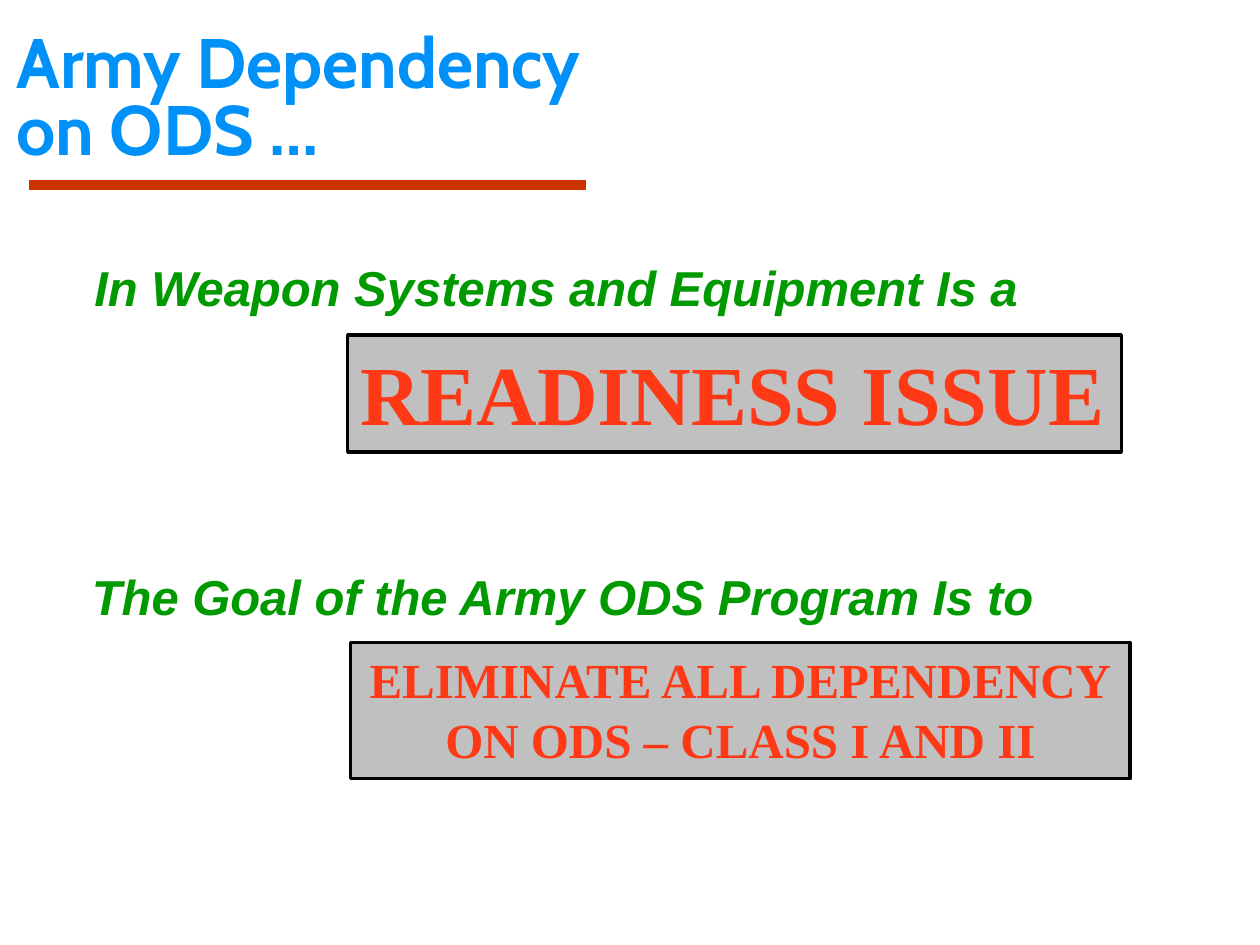
from pptx import Presentation
from pptx.dml.color import RGBColor
from pptx.enum.shapes import MSO_CONNECTOR, MSO_SHAPE
from pptx.enum.text import MSO_ANCHOR, PP_ALIGN
from pptx.oxml.ns import qn
from pptx.util import Inches, Pt
from lxml import etree


def color(hex_string):
    return RGBColor.from_string(hex_string)


def write_lines(frame, lines, font, size, hex_string, spacing, align=PP_ALIGN.LEFT, italic=False):
    for index, line in enumerate(lines):
        paragraph = frame.paragraphs[0] if index == 0 else frame.add_paragraph()
        paragraph.alignment = align
        paragraph.line_spacing = spacing
        paragraph.space_before = Pt(0)
        run = paragraph.add_run()
        run.text = line
        run.font.name = font
        run.font.size = Pt(size)
        run.font.bold = True
        run.font.italic = italic
        run.font.color.rgb = color(hex_string)


prs = Presentation()
prs.slide_width = Inches(10)
prs.slide_height = Inches(7.5)
slide = prs.slides.add_slide(prs.slide_layouts[5])

# Title
title = slide.shapes.title
title.left, title.top = Inches(0.03), Inches(0.08)
title.width, title.height = Inches(5.2), Inches(1.31)
title.text_frame.vertical_anchor = MSO_ANCHOR.BOTTOM
write_lines(title.text_frame, ["Army Dependency", "on ODS …"], "Cabin", 40, "0091F8", 0.8)

# Rule under the title
title_rule = slide.shapes.add_connector(
    MSO_CONNECTOR.STRAIGHT, Inches(0.23), Inches(1.47), Inches(4.65), Inches(1.47))
title_rule.line.color.rgb = color("CC3300")
title_rule.line.width = Pt(6)
etree.SubElement(title_rule._element.spPr, qn("a:effectLst"))

# Lead-in statements
statements = [
    ("In Weapon Systems and Equipment Is a", 0.65, 1.88, 7.6, 1.22, 1.25),
    ("The Goal of the Army ODS Program Is to", 0.63, 4.44, 8.48, 1.51, 1.02),
]
for wording, left, top, width, height, spacing in statements:
    statement = slide.shapes.add_textbox(Inches(left), Inches(top), Inches(width), Inches(height))
    statement.text_frame.word_wrap = True
    write_lines(statement.text_frame, [wording], "Arial", 28, "009900", spacing, italic=True)

# Boxed conclusions
conclusions = [
    (["READINESS ISSUE"], 2.76, 2.66, 6.14, 0.93, 48, 1.0, PP_ALIGN.LEFT),
    (["ELIMINATE ALL DEPENDENCY", "ON ODS – CLASS I AND II"],
     2.78, 5.1, 6.19, 1.08, 28, 1.02, PP_ALIGN.CENTER),
]
for lines, left, top, width, height, size, spacing, align in conclusions:
    conclusion = slide.shapes.add_shape(
        MSO_SHAPE.RECTANGLE, Inches(left), Inches(top), Inches(width), Inches(height))
    conclusion.shadow.inherit = False
    conclusion.fill.solid()
    conclusion.fill.fore_color.rgb = color("C0C0C0")
    conclusion.line.color.rgb = color("000000")
    conclusion.line.width = Pt(2)
    conclusion.text_frame.word_wrap = False
    conclusion.text_frame.vertical_anchor = MSO_ANCHOR.TOP
    write_lines(conclusion.text_frame, lines, "Times New Roman", size, "FF3816", spacing, align)

prs.save("out.pptx")
